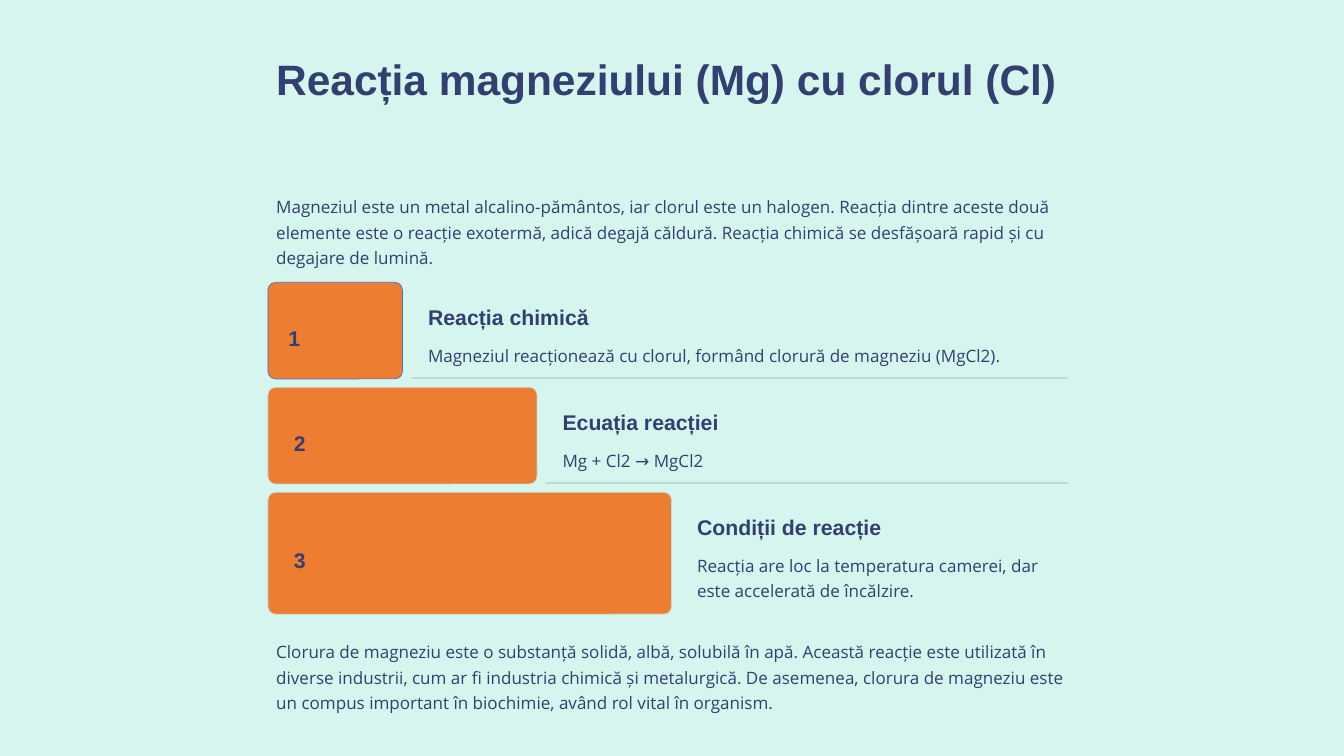
"""Build the slide on the reaction of magnesium with chlorine."""
from dataclasses import dataclass

from pptx import Presentation
from pptx.dml.color import RGBColor
from pptx.enum.shapes import MSO_SHAPE
from pptx.enum.text import PP_ALIGN
from pptx.shapes.autoshape import Shape
from pptx.slide import Slide
from pptx.util import Pt

MINT = RGBColor(0xD6, 0xF5, 0xEE)
NAVY = RGBColor(0x33, 0x3F, 0x70)
ORANGE = RGBColor(0xED, 0x7D, 0x31)
BLUE = RGBColor(0x44, 0x72, 0xC4)
SAGE = RGBColor(0xBC, 0xDB, 0xD4)

PAGE_WIDTH, PAGE_HEIGHT = 1152, 648
LEFT, TEXT_WIDTH = 229.7, 692
RULE_RIGHT, RULE_HEIGHT = 915.2, 1.5
STEPS_TOP, STEP_GAP = 242, 7.2
BAR_UNIT, BAR_RADIUS = 115.3, 6.55
NUMBER_LEFT, NUMBER_HEIGHT = 244.8, 27.4


@dataclass(frozen=True)
class TextStyle:
    font: str
    size: float
    line: float
    bold: bool


TITLE = TextStyle("Arial", 36.4, 45.5, True)
NUMBER = TextStyle("Arial", 18.2, 27.3, True)
HEADING = TextStyle("Arial", 18.2, 22.8, True)
BODY = TextStyle("Open Sans", 14.6, 21.9, False)


@dataclass(frozen=True)
class Area:
    left: float
    top: float
    width: float
    height: float

    def lengths(self) -> tuple[Pt, Pt, Pt, Pt]:
        return Pt(self.left), Pt(self.top), Pt(self.width), Pt(self.height)


@dataclass(frozen=True)
class Passage:
    text: str
    area: Area
    style: TextStyle


@dataclass(frozen=True)
class Step:
    heading: str
    detail: str
    height: float
    number_width: float
    heading_width: float
    detail_width: float
    detail_height: float
    outline: RGBColor


PASSAGES = [
    Passage("Reacția magneziului (Mg) cu clorul (Cl)", Area(LEFT, 40.3, TEXT_WIDTH, 90.7), TITLE),
    Passage(
        "Magneziul este un metal alcalino-pământos, iar clorul este un halogen. "
        "Reacția dintre aceste două elemente este o reacție exotermă, adică degajă căldură. "
        "Reacția chimică se desfășoară rapid și cu degajare de lumină.",
        Area(LEFT, 160.6, TEXT_WIDTH, 65.5), BODY),
    Passage(
        "Clorura de magneziu este o substanță solidă, albă, solubilă în apă. "
        "Această reacție este utilizată în diverse industrii, cum ar fi industria chimică și "
        "metalurgică. De asemenea, clorura de magneziu este un compus important în biochimie, "
        "având rol vital în organism.",
        Area(LEFT, 542.2, TEXT_WIDTH, 65.5), BODY),
]

STEPS = [
    Step("Reacția chimică", "Magneziul reacționează cu clorul, formând clorură de magneziu (MgCl2).",
         82.8, 9.4, 183.6, 508, 21.6, BLUE),
    Step("Ecuația reacției", "Mg + Cl2 → MgCl2", 82.8, 15.1, 181.4, 181.4, 21.6, SAGE),
    Step("Condiții de reacție", "Reacția are loc la temperatura camerei, dar este accelerată de încălzire.",
         104.4, 15.1, 208, 316.8, 43.9, SAGE),
]


def add_block(page: Slide, kind: MSO_SHAPE, area: Area, fill: RGBColor) -> Shape:
    block = page.shapes.add_shape(kind, *area.lengths())
    block.shadow.inherit = False
    block.fill.solid()
    block.fill.fore_color.rgb = fill
    block.line.fill.background()
    return block


def add_text(page: Slide, passage: Passage, centred: bool = False) -> None:
    box = page.shapes.add_textbox(*passage.area.lengths())
    box.text_frame.text = passage.text
    box.text_frame.word_wrap = not centred
    para = box.text_frame.paragraphs[0]
    para.alignment = PP_ALIGN.CENTER if centred else PP_ALIGN.LEFT
    para.line_spacing = Pt(passage.style.line)
    font = para.runs[0].font
    font.name = passage.style.font
    font.size = Pt(passage.style.size)
    font.bold = passage.style.bold
    font.color.rgb = NAVY


def add_step(page: Slide, step: Step, number: int, top: float) -> None:
    bar_width = number * BAR_UNIT
    bar_right = LEFT + bar_width
    text_left = bar_right + 14.8
    bar = add_block(page, MSO_SHAPE.ROUNDED_RECTANGLE, Area(LEFT, top, bar_width, step.height), ORANGE)
    bar.adjustments[0] = BAR_RADIUS / step.height
    bar.line.color.rgb = step.outline
    bar.line.width = Pt(0.6)

    number_top = top + (step.height - NUMBER_HEIGHT) / 2
    number_area = Area(NUMBER_LEFT, number_top, step.number_width, NUMBER_HEIGHT)
    add_text(page, Passage(str(number), number_area, NUMBER), centred=True)
    add_text(page, Passage(step.heading, Area(text_left, top + 14.7, step.heading_width, 23), HEADING))
    detail_area = Area(text_left, top + 46, step.detail_width, step.detail_height)
    add_text(page, Passage(step.detail, detail_area, BODY))

    if number < len(STEPS):
        rule_left = bar_right + 7.7
        rule_top = top + step.height - RULE_HEIGHT
        rule_area = Area(rule_left, rule_top, RULE_RIGHT - rule_left, RULE_HEIGHT)
        rule = add_block(page, MSO_SHAPE.ROUNDED_RECTANGLE, rule_area, SAGE)
        rule.adjustments[0] = 0.5


def main() -> None:
    deck = Presentation()
    deck.slide_width, deck.slide_height = Pt(PAGE_WIDTH), Pt(PAGE_HEIGHT)
    page = deck.slides.add_slide(deck.slide_layouts[6])
    add_block(page, MSO_SHAPE.RECTANGLE, Area(0, 0, PAGE_WIDTH, PAGE_HEIGHT), MINT)
    for passage in PASSAGES:
        add_text(page, passage)
    top = STEPS_TOP
    for number, step in enumerate(STEPS, start=1):
        add_step(page, step, number, top)
        top += step.height + STEP_GAP
    deck.save("out.pptx")


if __name__ == "__main__":
    main()
